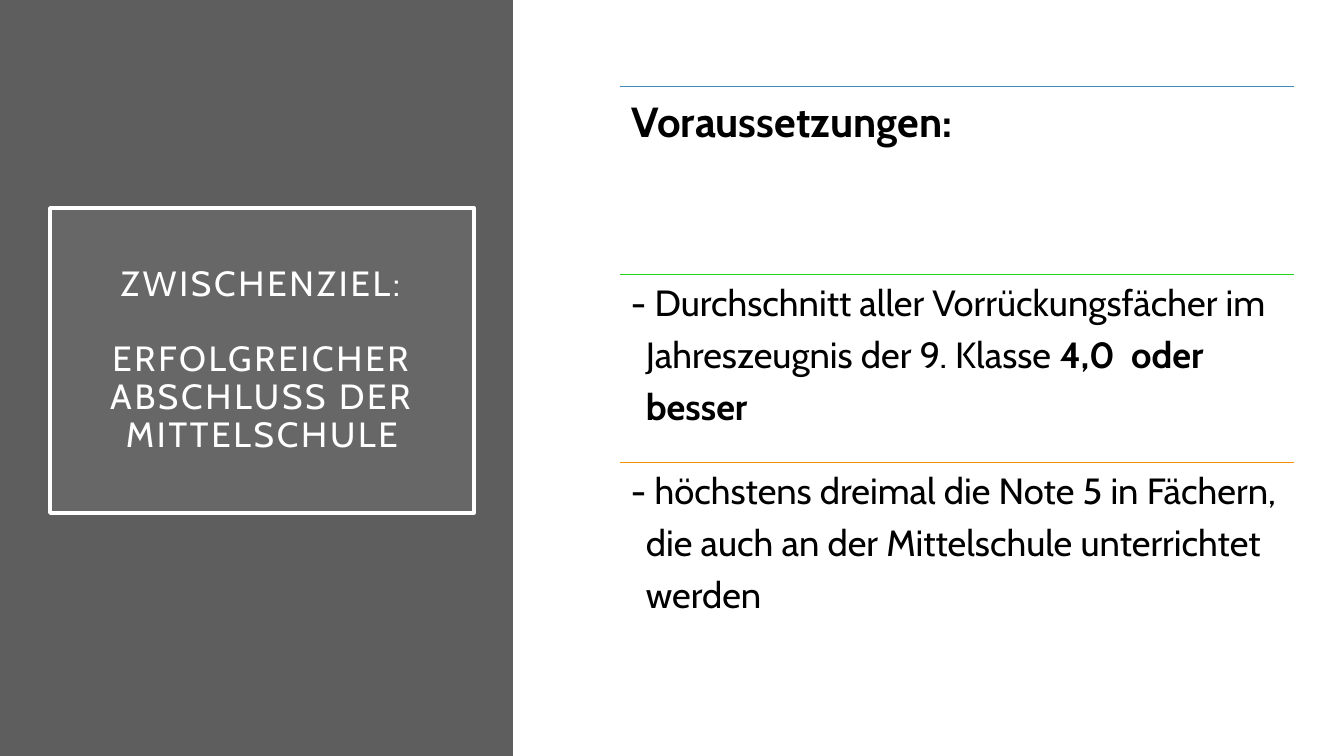
"""Build the slide on the requirements for finishing the Mittelschule."""
from dataclasses import dataclass

from lxml.etree import SubElement
from pptx import Presentation
from pptx.dml.color import RGBColor
from pptx.enum.shapes import MSO_CONNECTOR, MSO_SHAPE
from pptx.enum.text import MSO_ANCHOR, MSO_AUTO_SIZE, PP_ALIGN
from pptx.oxml.ns import qn
from pptx.util import Pt

PX = 914400 / 100.8
FONT = "Cabin"
COLORS = {
    "panel": "5E5E5E", "title_box": "9E9E9E", "white": "FFFFFF", "black": "000000",
    "blue": "418AB3", "green": "25D421", "orange": "F69200",
}
LEFT, WIDTH, FIRST_RULE, ROW = 620, 674, 86, 188
HANGING = 15


@dataclass(frozen=True)
class Run:
    """A piece of text with its weight."""
    text: str
    bold: bool = False


@dataclass(frozen=True)
class Section:
    """A text block beneath a coloured rule, as lines of runs."""
    color: str
    size: int
    inset: int
    drop: int
    lines: tuple[tuple[Run, ...], ...]


SECTIONS = (
    Section("blue", 30, 12, 3, ((Run("Voraussetzungen:", True),),)),
    Section("green", 26, 11, 0, (
        (Run("- Durchschnitt aller Vorrückungsfächer im"),),
        (Run("Jahreszeugnis der 9. Klasse "), Run("4,0  oder", True)),
        (Run("besser", True),),
    )),
    Section("orange", 26, 11, 0, (
        (Run("- höchstens dreimal die Note 5 in Fächern,"),),
        (Run("die auch an der Mittelschule unterrichtet"),),
        (Run("werden"),),
    )),
)


def px(n: int) -> int:
    """Turn pixels into EMU."""
    return round(n * PX)


def rgb(name: str) -> RGBColor:
    """Look up a colour by name."""
    return RGBColor.from_string(COLORS[name])


def set_all(obj, values: dict) -> None:
    """Set each attribute of an object from a dict."""
    for name, value in values.items():
        setattr(obj, name, value)


def format_frame(tf, inset: int, anchor: MSO_ANCHOR) -> None:
    """Set wrapping, equal insets and anchoring."""
    sides = ("left", "top", "right", "bottom")
    set_all(tf, {f"margin_{side}": px(inset) for side in sides})
    set_all(tf, {"word_wrap": True, "auto_size": MSO_AUTO_SIZE.NONE, "vertical_anchor": anchor})


def format_font(font, size: int, color: str, bold: bool = False) -> None:
    """Set typeface, size, weight and colour."""
    set_all(font, {"name": FONT, "size": Pt(size), "bold": bold})
    font.color.rgb = rgb(color)


def add_panel(s) -> None:
    """Draw the dark panel behind the title."""
    panel = s.shapes.add_shape(MSO_SHAPE.RECTANGLE, 0, 0, px(513), px(756))
    panel.shadow.inherit = False
    panel.fill.solid()
    panel.fill.fore_color.rgb = rgb("panel")
    panel.line.fill.background()
    s.shapes.title.element.addprevious(panel.element)


def fill_title(title) -> None:
    """Place and format the framed title."""
    set_all(title, {"left": px(50), "top": px(208), "width": px(424), "height": px(305)})
    title.fill.solid()
    title.fill.fore_color.rgb = rgb("title_box")
    color = title.element.spPr.find(f"{qn('a:solidFill')}/{qn('a:srgbClr')}")
    SubElement(color, qn("a:alpha"), val="15000")
    title.line.color.rgb = rgb("white")
    title.line.width = Pt(2.5)
    tf = title.text_frame
    format_frame(tf, 20, MSO_ANCHOR.MIDDLE)
    p = tf.paragraphs[0]
    p.text = "ZWISCHENZIEL:\v\vERFOLGREICHER ABSCHLUSS DER MITTELSCHULE"
    set_all(p, {"alignment": PP_ALIGN.CENTER, "line_spacing": 0.9})
    format_font(p.font, 25, "white")
    for r in p.runs:
        format_font(r.font, 25, "white")
        r.font._element.set("spc", "200")
    for br in p._p.findall(qn("a:br")):
        SubElement(br, qn("a:rPr"), sz="2500")


def add_section(s, section: Section, top: int) -> None:
    """Draw one rule and the text below it."""
    rule = s.shapes.add_connector(
        MSO_CONNECTOR.STRAIGHT, px(LEFT), px(top), px(LEFT + WIDTH), px(top))
    rule.line.color.rgb = rgb(section.color)
    rule.line.width = Pt(0.5)
    SubElement(rule._element.spPr, qn("a:effectLst"))
    box = s.shapes.add_textbox(px(LEFT), px(top + section.drop), px(WIDTH), px(ROW))
    tf = box.text_frame
    format_frame(tf, section.inset, MSO_ANCHOR.TOP)
    for i, line in enumerate(section.lines):
        p = tf.add_paragraph() if i else tf.paragraphs[0]
        set_all(p, {"line_spacing": 0.9, "space_after": Pt(9)})
        if i:
            p._p.get_or_add_pPr().set("marL", str(px(HANGING)))
        for run in line:
            r = p.add_run()
            r.text = run.text
            format_font(r.font, section.size, "black", run.bold)


def main() -> None:
    """Build and save the slide."""
    prs = Presentation()
    set_all(prs, {"slide_width": px(1344), "slide_height": px(756)})
    s = prs.slides.add_slide(prs.slide_layouts[5])
    add_panel(s)
    fill_title(s.shapes.title)
    for i, section in enumerate(SECTIONS):
        add_section(s, section, FIRST_RULE + i * ROW)
    prs.save("out.pptx")


if __name__ == "__main__":
    main()
